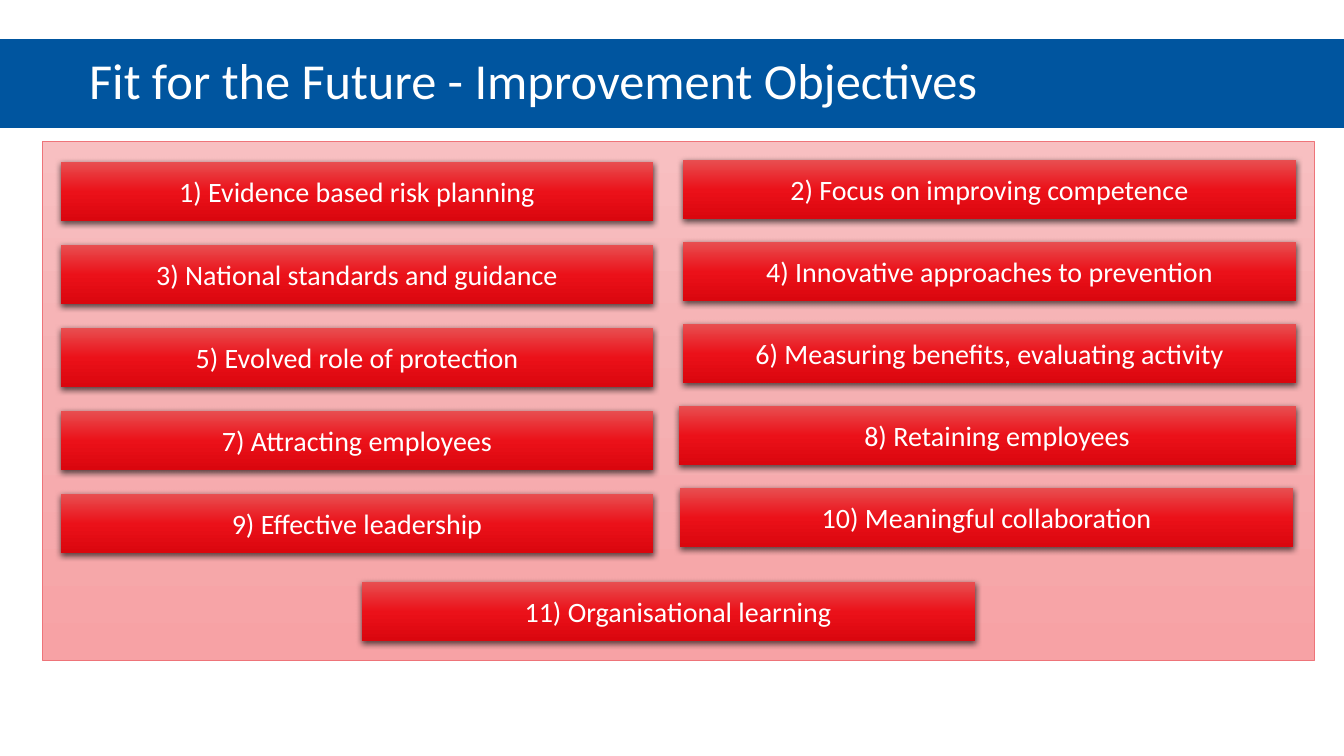
from copy import deepcopy
from lxml import etree
from pptx import Presentation
from pptx import util as u
from pptx.dml.color import RGBColor
from pptx.enum import shapes, text
from pptx.oxml import ns

TITLE = "Fit for the Future - Improvement Objectives"
LEFT = [
    "1) Evidence based risk planning",
    "3) National standards and guidance",
    "5) Evolved role of protection",
    "7) Attracting employees",
    "9) Effective leadership",
]
RIGHT = [
    ("2) Focus on improving competence", 683, 613, 20),
    ("4) Innovative approaches to prevention", 683, 613, 20),
    ("6) Measuring benefits, evaluating activity", 683, 613, 20),
    ("8) Retaining employees", 679, 617, 39),
    ("10) Meaningful collaboration", 680, 613, 20),
]
LAST = "11) Organisational learning"

FONT = "Calibri"
WHITE = RGBColor(0xFF, 0xFF, 0xFF)
BLUE = RGBColor(0x00, 0x55, 0x9F)
PANEL_LINE = RGBColor(0xEE, 0x74, 0x79)
PANEL_SHADES = [RGBColor(0xF8, 0xBF, 0xC1), RGBColor(0xF5, 0xB0, 0xB2), RGBColor(0xF7, 0xA2, 0xA5)]
BAR_SHADES = [RGBColor(0xE8, 0x4E, 0x50), RGBColor(0xEB, 0x11, 0x19), RGBColor(0xDA, 0x06, 0x0E)]
BLACK = RGBColor(0, 0, 0)


def px(length):
    return u.Emu(round(length * 914400 / 100.8))


def shade(shape, colours):
    shape.fill.gradient()
    shape.fill.gradient_angle = 270
    stops = shape._element.spPr.find(".//" + ns.qn("a:gsLst"))
    stops.insert(1, deepcopy(stops[0]))
    for index, (stop, colour) in enumerate(zip(shape.fill.gradient_stops, colours)):
        stop.position = index / 2
        stop.color.rgb = colour


def add_rectangle(page, left, top, width, height, colours):
    box = page.shapes.add_shape(
        shapes.MSO_SHAPE.RECTANGLE, px(left), px(top), px(width), px(height))
    box.shadow.inherit = False
    shade(box, colours)
    return box


def cast_shadow(box):
    effects = box._element.spPr.find(ns.qn("a:effectLst"))
    shadow = etree.SubElement(
        effects, ns.qn("a:outerShdw"), blurRad=str(u.Pt(4.5)), dist=str(u.Pt(1.5)),
        dir="5400000", algn="ctr", rotWithShape="0")
    colour = etree.SubElement(shadow, ns.qn("a:srgbClr"), val=str(BLACK))
    etree.SubElement(colour, ns.qn("a:alpha"), val="63000")


def set_font(para, size):
    para.font.name = FONT
    para.font.size = u.Pt(size)
    para.font.color.rgb = WHITE


def add_bar(page, label, left, top, width, inset=20):
    box = add_rectangle(page, left, top, width, 59, BAR_SHADES)
    box.line.fill.background()
    cast_shadow(box)
    frame = box.text_frame
    frame.word_wrap = True
    frame.vertical_anchor = text.MSO_ANCHOR.MIDDLE
    frame.margin_left, frame.margin_right = px(inset), px(20)
    frame.margin_top = frame.margin_bottom = 0
    para = frame.paragraphs[0]
    para.text = label
    para.alignment = text.PP_ALIGN.CENTER
    set_font(para, 20)


def add_title(page):
    title = page.shapes.title
    title.left, title.top, title.width, title.height = px(0), px(39), px(1344), px(89)
    title.fill.solid()
    title.fill.fore_color.rgb = BLUE
    frame = title.text_frame
    frame.text = TITLE
    frame.auto_size = text.MSO_AUTO_SIZE.NONE
    frame.vertical_anchor = text.MSO_ANCHOR.MIDDLE
    para = frame.paragraphs[0]
    para.alignment = text.PP_ALIGN.LEFT
    para.line_spacing = 0.9
    para._p.get_or_add_pPr().set("marL", str(px(79)))
    set_font(para, 36)


def main():
    deck = Presentation()
    deck.slide_width, deck.slide_height = px(1344), px(756)
    page = deck.slides.add_slide(deck.slide_layouts[5])
    add_title(page)
    panel = add_rectangle(page, 42, 141, 1272, 519, PANEL_SHADES)
    panel.line.color.rgb = PANEL_LINE
    panel.line.width = u.Pt(0.5)
    for row, label in enumerate(LEFT):
        add_bar(page, label, 61, 162 + 83 * row, 592)
    for row, (label, left, width, inset) in enumerate(RIGHT):
        add_bar(page, label, left, 160 + 82 * row, width, inset)
    add_bar(page, LAST, 362, 582, 613, 39)
    deck.save("out.pptx")


if __name__ == "__main__":
    main()
